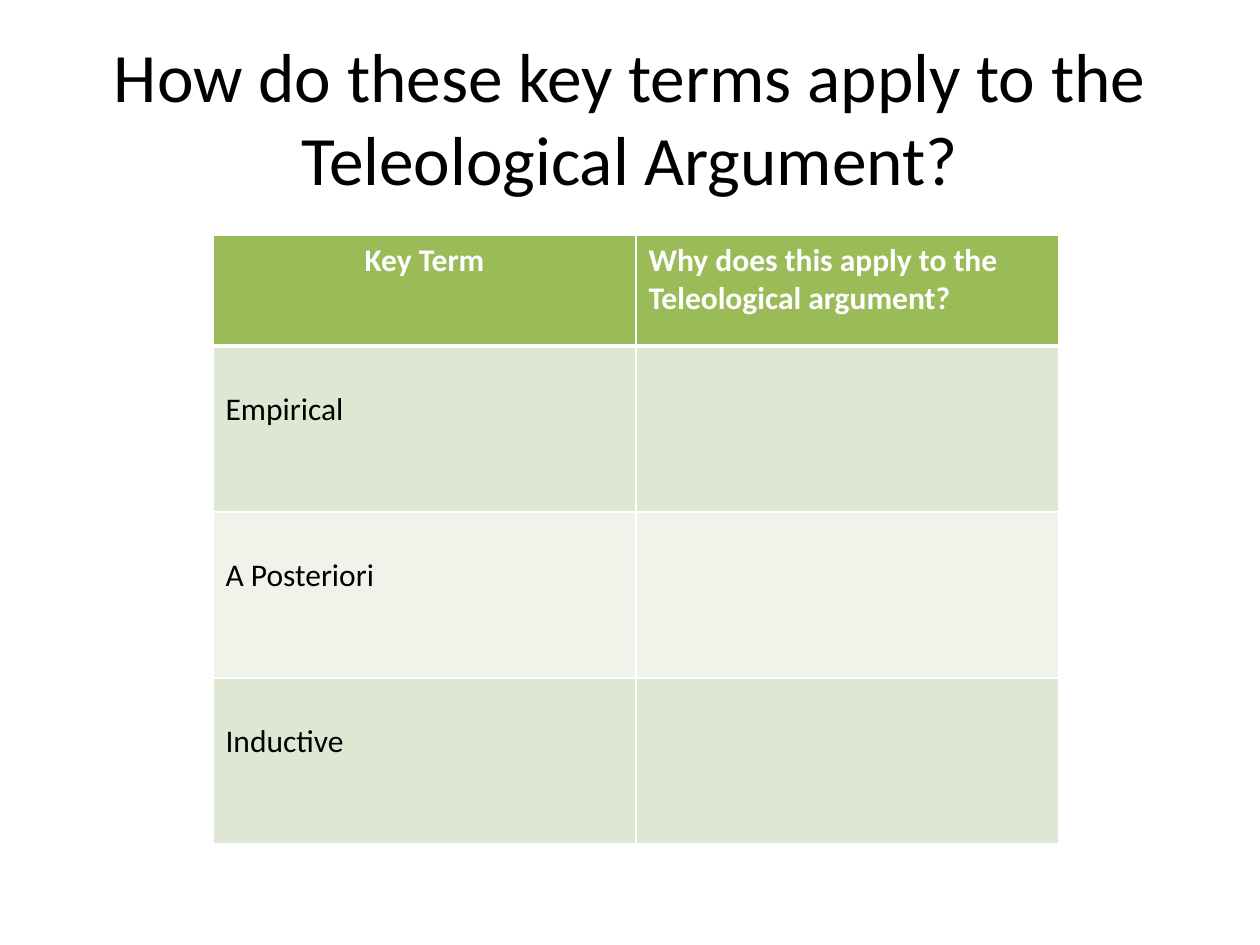
from dataclasses import dataclass

from lxml import etree
from pptx import Presentation, util as u
from pptx.dml.color import RGBColor
from pptx.enum import text
from pptx.oxml import ns

PX_PER_INCH = 126


def px(length):
    return u.Emu(round(length * 914400 / PX_PER_INCH))


@dataclass(frozen=True)
class Theme:
    font: str = "Calibri"
    ink: str = "000000"
    paper: str = "FFFFFF"
    header: str = "9BBB59"
    bands: tuple = ("DEE7D1", "EFF3EA")
    title_size: float = 39.6
    table_size: float = 18
    rule: int = 1
    header_rule: int = 3


class SlideBuilder:
    def __init__(self, slide, theme):
        self.slide = slide
        self.theme = theme

    def wording(self, frame, words, size, color, bold=False, align=text.PP_ALIGN.LEFT):
        frame.text = words
        paragraph = frame.paragraphs[0]
        paragraph.alignment = align
        font = paragraph.font
        if paragraph.runs:
            font = paragraph.runs[0].font
        font.name = self.theme.font
        font.size = u.Pt(size)
        font.bold = bold
        font.color.rgb = RGBColor.from_string(color)

    def title(self, words, left, top, width, height):
        heading = self.slide.shapes.add_textbox(*map(px, (left, top, width, height)))
        frame = heading.text_frame
        frame.word_wrap = True
        frame.vertical_anchor = text.MSO_ANCHOR.MIDDLE
        self.wording(frame, words, self.theme.title_size, self.theme.ink,
                     align=text.PP_ALIGN.CENTER)

    def borders(self, cell, top, bottom):
        properties = cell._tc.get_or_add_tcPr()
        rule = self.theme.rule
        for side, points in zip("LRTB", (rule, rule, top, bottom)):
            line = etree.SubElement(properties, ns.qn(f"a:ln{side}"), w=str(u.Pt(points)))
            fill = etree.SubElement(line, ns.qn("a:solidFill"))
            etree.SubElement(fill, ns.qn("a:srgbClr"), val=self.theme.paper)

    def cell(self, cell, words, fill, color, top_rule, bottom_rule, **style):
        self.borders(cell, top_rule, bottom_rule)
        cell.fill.solid()
        cell.fill.fore_color.rgb = RGBColor.from_string(fill)
        self.wording(cell.text_frame, words, self.theme.table_size, color, **style)

    def table(self, headings, terms, left, top, width, header_height, row_height, term_inset):
        theme = self.theme
        height = header_height + row_height * len(terms)
        grid = self.slide.shapes.add_table(
            len(terms) + 1, len(headings), *map(px, (left, top, width, height))).table
        grid.rows[0].height = px(header_height)
        for column, (heading, align) in enumerate(headings):
            self.cell(grid.cell(0, column), heading, theme.header, theme.paper,
                      theme.rule, theme.header_rule, bold=True, align=align)
        for row, term in enumerate(terms, 1):
            grid.rows[row].height = px(row_height)
            band = theme.bands[(row - 1) % len(theme.bands)]
            top_rule = theme.header_rule if row == 1 else theme.rule
            for column, words in enumerate((term, "")):
                entry = grid.cell(row, column)
                self.cell(entry, words, band, theme.ink, top_rule, theme.rule)
                entry.margin_top = px(term_inset)


def main():
    deck = Presentation()
    deck.slide_width, deck.slide_height = u.Inches(10), u.Inches(7.5)
    builder = SlideBuilder(deck.slides.add_slide(deck.slide_layouts[6]), Theme())
    builder.title("How do these key terms apply to the Teleological Argument?",
                  63, 38, 1134, 157)
    builder.table(
        [("Key Term", text.PP_ALIGN.CENTER),
         ("Why does this apply to the Teleological argument?", text.PP_ALIGN.LEFT)],
        ["Empirical", "A Posteriori", "Inductive"],
        left=213, top=235, width=846, header_height=111, row_height=166, term_inset=45)
    deck.save("out.pptx")


if __name__ == "__main__":
    main()
